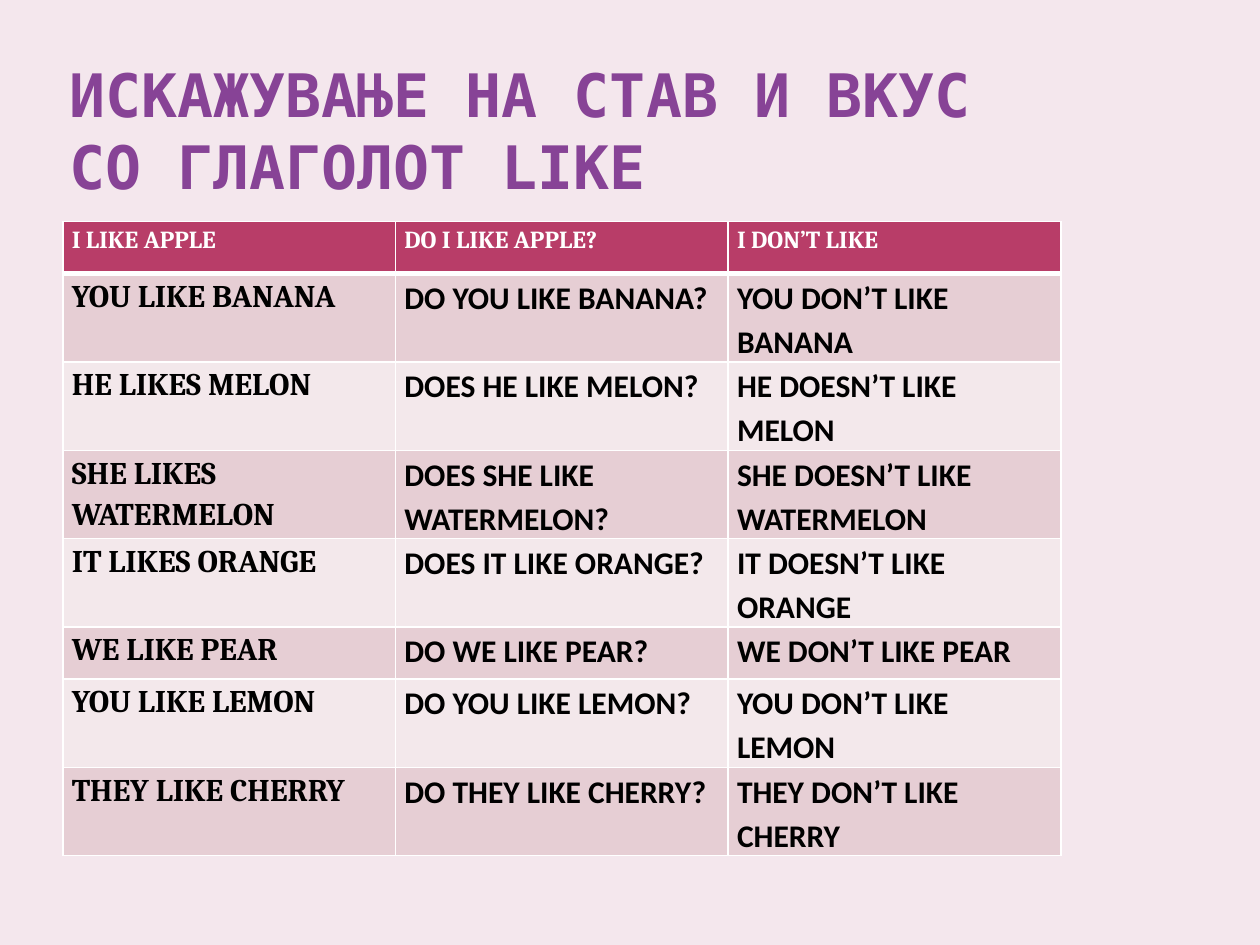
from typing import NamedTuple

from pptx import Presentation
from pptx.dml.color import RGBColor
from pptx.enum.text import MSO_ANCHOR, MSO_AUTO_SIZE, PP_ALIGN
from pptx.oxml import parse_xml
from pptx.oxml.ns import nsdecls
from pptx.util import Inches, Pt

COLORS = {
    "background": "F4E7ED",
    "title": "874396",
    "header": "B83D68",
    "band_dark": "E6CED4",
    "band_light": "F3E8EB",
    "white": "FFFFFF",
    "black": "000000",
}
SLIDE_WIDTH, SLIDE_HEIGHT = 10, 7.5
LEFT, CONTENT_WIDTH = 0.05 * SLIDE_WIDTH, 0.792 * SLIDE_WIDTH
TABLE_TOP, ROW_HEIGHT = 1.76, 0.41


class Forms(NamedTuple):
    """One table row: the three forms of a sentence with LIKE."""
    statement: str
    question: str
    negation: str


class CellStyle(NamedTuple):
    font: str
    size: float
    color: str
    fill: str
    top: float = 1
    bottom: float = 1


ROWS = [
    Forms("I LIKE APPLE", "DO I LIKE APPLE?", "I DON’T LIKE"),
    Forms("YOU LIKE BANANA", "DO YOU LIKE BANANA?", "YOU DON’T LIKE BANANA"),
    Forms("HE LIKES MELON", "DOES HE LIKE MELON?", "HE DOESN’T LIKE MELON"),
    Forms("SHE LIKES WATERMELON", "DOES SHE LIKE WATERMELON?", "SHE DOESN’T LIKE WATERMELON"),
    Forms("IT LIKES ORANGE", "DOES IT LIKE ORANGE?", "IT DOESN’T LIKE ORANGE"),
    Forms("WE LIKE PEAR", "DO WE LIKE PEAR?", "WE DON’T LIKE PEAR"),
    Forms("YOU LIKE LEMON", "DO YOU LIKE LEMON?", "YOU DON’T LIKE LEMON"),
    Forms("THEY LIKE CHERRY", "DO THEY LIKE CHERRY?", "THEY DON’T LIKE CHERRY"),
]


def rgb(name: str) -> RGBColor:
    return RGBColor.from_string(COLORS[name])


def set_font(para, name: str, size: float, color: str) -> None:
    para.font.name, para.font.size, para.font.bold = name, Pt(size), True
    para.font.color.rgb = rgb(color)


def cell_style(row: int, column: int) -> CellStyle:
    """Header row first, then alternating bands; statements are in Cambria."""
    if row == 0:
        return CellStyle("Cambria", 14, "white", "header", bottom=3)
    return CellStyle(
        font="Calibri" if column else "Cambria",
        size=18,
        color="black",
        fill="band_dark" if row % 2 else "band_light",
        top=3 if row == 1 else 1,
    )


def draw_cell(cell, text: str, style: CellStyle) -> None:
    cell.margin_left = cell.margin_right = Inches(0.07)
    cell.margin_top = cell.margin_bottom = 0
    cell.text = text
    para = cell.text_frame.paragraphs[0]
    para.line_spacing = 1.15
    set_font(para, style.font, style.size, style.color)

    # Borders come before the fill in the cell properties
    properties = cell._tc.get_or_add_tcPr()
    for side, width in zip("LRTB", (1, 1, style.top, style.bottom)):
        properties.append(parse_xml(
            f'<a:ln{side} {nsdecls("a")} w="{Pt(width)}"><a:solidFill>'
            f'<a:srgbClr val="{COLORS["white"]}"/></a:solidFill></a:ln{side}>'))
    cell.fill.solid()
    cell.fill.fore_color.rgb = rgb(style.fill)


def draw_title(page) -> None:
    title = page.shapes.title
    title.left, title.top = Inches(LEFT), Inches(0.35)
    title.width, title.height = Inches(CONTENT_WIDTH), Inches(1.25)
    box = title.text_frame
    box.text = "ИСКАЖУВАЊЕ НА СТАВ И ВКУС\vСО ГЛАГОЛОТ LIKE"
    box.word_wrap, box.auto_size = True, MSO_AUTO_SIZE.NONE
    box.vertical_anchor = MSO_ANCHOR.BOTTOM
    box.margin_left = box.margin_right = Inches(0.05)
    box.margin_top = box.margin_bottom = 0
    para = box.paragraphs[0]
    para.alignment = PP_ALIGN.LEFT
    set_font(para, "DejaVu Sans Mono", 34.2, "title")


def draw_table(page) -> None:
    table = page.shapes.add_table(
        len(ROWS), len(Forms._fields), Inches(LEFT), Inches(TABLE_TOP),
        Inches(CONTENT_WIDTH), Inches(ROW_HEIGHT * len(ROWS))).table
    table.horz_banding = False
    for row, forms in enumerate(ROWS):
        for column, text in enumerate(forms):
            draw_cell(table.cell(row, column), text, cell_style(row, column))


def main() -> None:
    deck = Presentation()
    deck.slide_width, deck.slide_height = Inches(SLIDE_WIDTH), Inches(SLIDE_HEIGHT)
    page = deck.slides.add_slide(deck.slide_layouts[5])  # title only
    page.background.fill.solid()
    page.background.fill.fore_color.rgb = rgb("background")
    draw_title(page)
    draw_table(page)
    deck.save("out.pptx")


if __name__ == "__main__":
    main()
